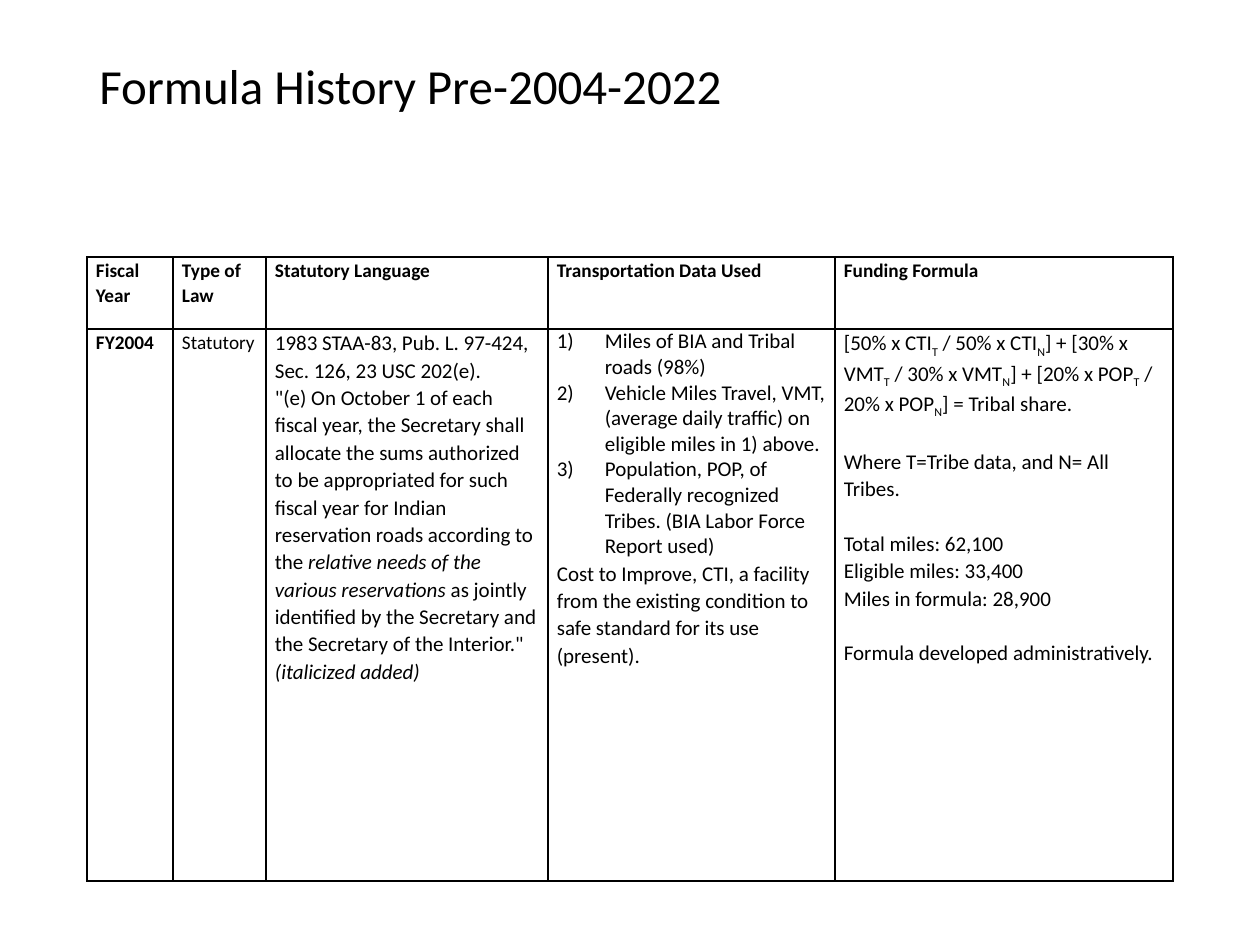
from lxml.etree import SubElement
from pptx import Presentation
from pptx.dml.color import RGBColor
from pptx.enum.text import MSO_ANCHOR
from pptx.oxml.ns import qn
from pptx.util import Emu, Pt

COLORS = {"ink": "000000"}
BOLD = {"bold": True}
ITALIC = {"italic": True}
SUBSCRIPT = "-25000"

TITLE = "Formula History Pre-2004-2022"
HEADINGS = ["Fiscal Year", "Type of Law", "Statutory Language",
            "Transportation Data Used", "Funding Formula"]

STATUTE = [
    {"runs": [("1983 STAA-83, Pub. L. 97-424, Sec. 126, 23 USC 202(e).", {})]},
    {"runs": [
        ("\"(e) On October 1 of each fiscal year, the Secretary shall allocate the sums "
         "authorized to be appropriated for such fiscal year for Indian reservation roads "
         "according to the ", {}),
        ("relative needs of the various reservations", ITALIC),
        (" as jointly identified by the Secretary and the Secretary of the Interior.\" ", {}),
        ("(italicized added)", ITALIC)]},
]
DATA_USED = [
    {"runs": [(text, {})], "numbered": True, "format": {}} for text in (
        "Miles of BIA and Tribal roads (98%)",
        "Vehicle Miles Travel, VMT, (average daily traffic) on eligible miles in 1) above.",
        "Population, POP, of Federally recognized Tribes. (BIA Labor Force Report used)")
] + [{"runs": [("Cost to Improve, CTI, a facility from the existing condition to safe "
                "standard for its use (present).", {})]}]
FORMULA_TERMS = [("[50% x CTI", "T"), (" / 50% x CTI", "N"),
                 ("] + [30% x VMT", "T"), (" / 30% x VMT", "N"),
                 ("] + [20% x POP", "T"), (" / 20% x POP", "N"),
                 ("] = Tribal share.", "")]
FORMULA_NOTES = [
    ["Where T=Tribe data, and N= All Tribes."],
    ["Total miles: 62,100", "Eligible miles: 33,400", "Miles in formula: 28,900"],
    ["Formula developed administratively."],
]

PX = 914400 // 126
LEFT, WIDTH = 87, 1086
TITLE_TOP, TITLE_HEIGHT = 50, 78
TABLE_TOP = 257
COLUMNS = [86, 93, 282, 287, 338]
ROWS = [72, 552]
CELL_INSET, NUMBER_INDENT = 9, 48
BODY_LINE = {"line_spacing": 1.07}
SECTION_LINE = {"line_spacing": 1.07, "space_before": Pt(15.6)}
CELL_FORMAT = {"margin_left": Emu(CELL_INSET * PX), "margin_right": Emu(CELL_INSET * PX),
               "margin_top": 0, "margin_bottom": 0}


def apply(target, values):
    for name, value in values.items():
        setattr(target, name, value)


def add_run(paragraph, text, size, style):
    run = paragraph.add_run()
    run.text = text
    apply(run.font, {"name": "Calibri", "size": Pt(size), "bold": False, **style})
    run.font.color.rgb = RGBColor.from_string(COLORS["ink"])
    return run


def number(paragraph):
    properties = paragraph._p.get_or_add_pPr()
    properties.set("marL", str(NUMBER_INDENT * PX))
    properties.set("indent", str(-NUMBER_INDENT * PX))
    SubElement(properties, qn("a:buFont"), typeface="+mj-lt")
    SubElement(properties, qn("a:buAutoNum"), type="arabicParenR")


def write(frame, paragraphs, size):
    for index, content in enumerate(paragraphs):
        paragraph = frame.add_paragraph() if index else frame.paragraphs[0]
        apply(paragraph, content.get("format", BODY_LINE))
        if content.get("numbered"):
            number(paragraph)
        for text, style in content["runs"]:
            add_run(paragraph, text, size, style)


def write_formula(frame):
    terms = frame.paragraphs[0]
    apply(terms, BODY_LINE)
    for term, subscript in FORMULA_TERMS:
        add_run(terms, term, 12, {})
        if subscript:
            lowered = add_run(terms, subscript, 12, {})
            lowered._r.get_or_add_rPr().set("baseline", SUBSCRIPT)
    for section in FORMULA_NOTES:
        for index, note in enumerate(section):
            paragraph = frame.add_paragraph()
            apply(paragraph, BODY_LINE if index else SECTION_LINE)
            add_run(paragraph, note, 12, {})


def outline(cell):
    properties = cell._tc.get_or_add_tcPr()
    for position, side in enumerate(("lnL", "lnR", "lnT", "lnB")):
        border = SubElement(properties, qn(f"a:{side}"), w=str(Pt(1)))
        fill = SubElement(border, qn("a:solidFill"))
        SubElement(fill, qn("a:srgbClr"), val=COLORS["ink"])
        properties.insert(position, border)


def add_title(slide):
    box = slide.shapes.add_textbox(
        *(Emu(v * PX) for v in (LEFT, TITLE_TOP, WIDTH, TITLE_HEIGHT)))
    apply(box.text_frame, {"word_wrap": True, "vertical_anchor": MSO_ANCHOR.MIDDLE})
    write(box.text_frame,
          [{"runs": [(TITLE, {})], "format": {"line_spacing": 0.9}}], 28)


def add_history(slide):
    history = slide.shapes.add_table(
        len(ROWS), len(COLUMNS),
        *(Emu(v * PX) for v in (LEFT, TABLE_TOP, WIDTH, sum(ROWS)))).table
    apply(history, {"first_row": False, "horz_banding": False})
    for column, width in zip(history.columns, COLUMNS):
        column.width = Emu(width * PX)
    for row, height in zip(history.rows, ROWS):
        row.height = Emu(height * PX)
    for cell in history.iter_cells():
        apply(cell, CELL_FORMAT)
        cell.fill.background()
        outline(cell)
    for column, heading in enumerate(HEADINGS):
        write(history.cell(0, column).text_frame, [{"runs": [(heading, BOLD)]}], 11)
    entries = [([{"runs": [("FY2004", BOLD)]}], 11),
               ([{"runs": [("Statutory", {})]}], 11),
               (STATUTE, 12), (DATA_USED, 12)]
    for column, (paragraphs, size) in enumerate(entries):
        write(history.cell(1, column).text_frame, paragraphs, size)
    write_formula(history.cell(1, len(entries)).text_frame)


def main():
    deck = Presentation()
    apply(deck, {"slide_width": Emu(1260 * PX), "slide_height": Emu(945 * PX)})
    slide = deck.slides.add_slide(deck.slide_layouts[6])
    add_title(slide)
    add_history(slide)
    deck.save("out.pptx")


if __name__ == "__main__":
    main()
